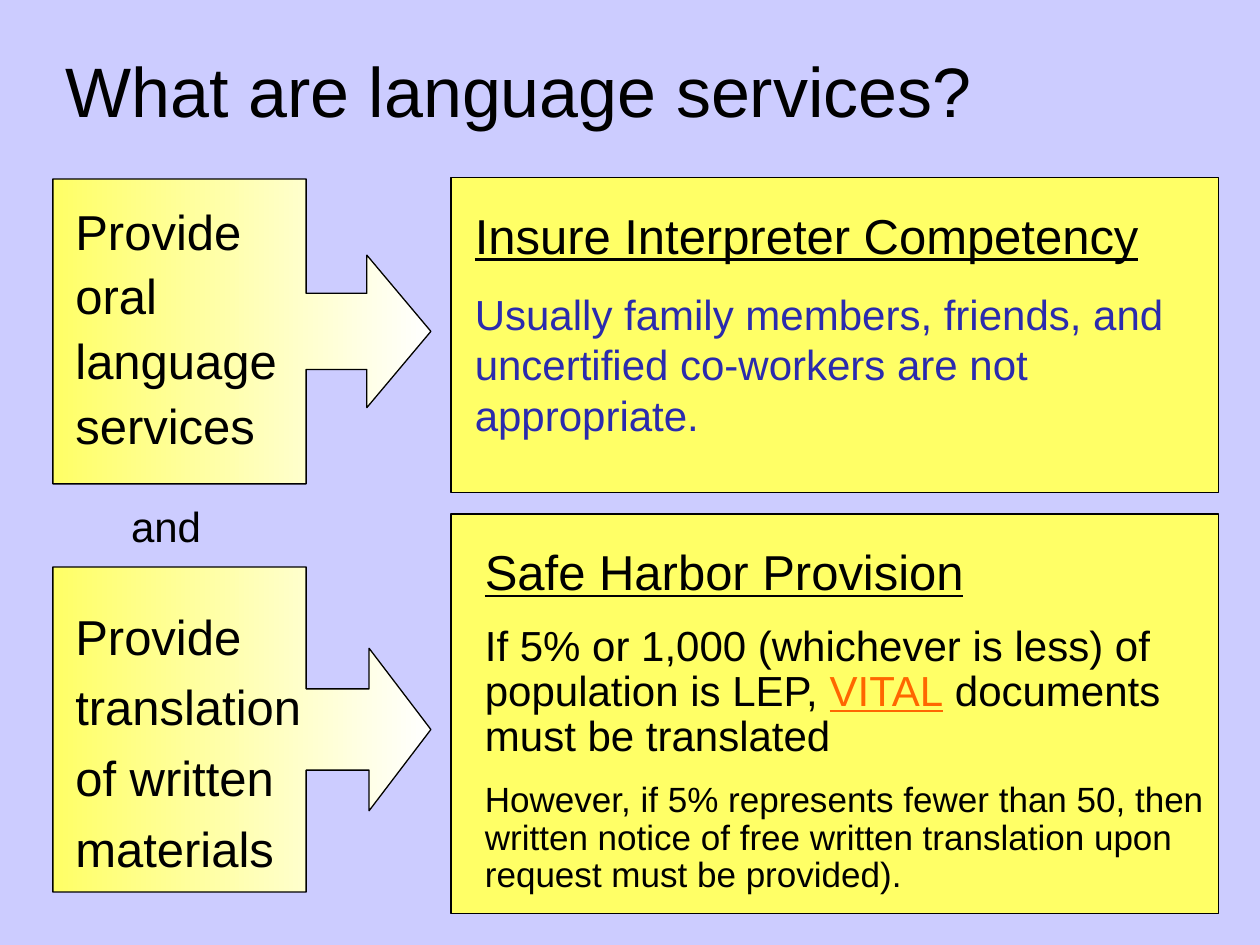
"""Build the slide that explains what language services are."""
import pptx
import pptx.dml.color
import pptx.enum.shapes
import pptx.enum.text
import pptx.util
from dataclasses import dataclass

Inches = pptx.util.Inches
Pt = pptx.util.Pt
Shape = pptx.enum.shapes.MSO_SHAPE


@dataclass(frozen=True)
class Theme:
    font: str = "Arial"
    background: str = "CCCCFF"
    panel: str = "FFFF66"
    fade: str = "FFFFFF"
    ink: str = "000000"
    note: str = "2B2BAD"
    accent: str = "FF6600"
    title: int = 40
    heading: int = 28
    body: int = 24
    small: int = 20
    line: float = 0.75


THEME = Theme()


def paragraph(*spans, size=THEME.heading, spacing=1.0, before=0):
    return {"spans": spans, "size": size, "spacing": spacing, "before": before}


def span(text, color=THEME.ink, underline=False):
    return text, color, underline


TITLE = paragraph(span("What are language services?"), size=THEME.title)
TITLE_AREA = (0.42, 0.33, 9, 0.77)

CALLOUTS = [
    ((0.42, 4.5, 3, 2.58), (0.25, 0.25, 0.19, 0.67)),
    ((0.42, 1.42, 3, 2.42), (0.25, 0.25, 0.21, 0.67)),
]
PANELS = [(3.58, 4.08, 6.09, 3.17), (3.58, 1.41, 6.09, 2.5)]

TEXTS = [
    ((0.5, 1.5, 1.92, 2.16), 0.1,
     [paragraph(span("Provide oral language services"), spacing=1.1)]),
    ((3.67, 1.58, 6.33, 1.97), 0.1, [
        paragraph(span("Insure Interpreter Competency", underline=True)),
        paragraph(span("Usually family members, friends, and uncertified "
                       "co-workers are not appropriate.", THEME.note),
                  size=THEME.body, before=14),
    ]),
    ((3.75, 4.25, 5.92, 2.9), 0.1, [
        paragraph(span("Safe Harbor Provision", underline=True)),
        paragraph(span("If 5% or 1,000 (whichever is less) of population is LEP, "),
                  span("VITAL", THEME.accent, True),
                  span(" documents must be translated"),
                  size=THEME.body, spacing=0.9, before=14),
        paragraph(span("However, if 5% represents fewer than 50, then written "
                       "notice of free written translation upon request must "
                       "be provided)."),
                  size=THEME.small, spacing=0.9, before=12),
    ]),
    ((0.5, 4.67, 2.17, 2.34), 0.1,
     [paragraph(span("Provide translation of written materials"), spacing=1.2)]),
    ((0.67, 3.92, 1.58, 0.5), 0.37, [paragraph(span("and"), size=THEME.body)]),
]


def rgb(value):
    return pptx.dml.color.RGBColor.from_string(value)


def place(area):
    return [Inches(length) for length in area]


def write(box, paragraphs, left_inset=0.1):
    frame = box.text_frame
    frame.word_wrap = True
    frame.auto_size = pptx.enum.text.MSO_AUTO_SIZE.NONE
    frame.vertical_anchor = pptx.enum.text.MSO_ANCHOR.TOP
    frame.margin_left, frame.margin_right = Inches(left_inset), Inches(0.1)
    frame.margin_top = frame.margin_bottom = Inches(0.05)
    for index, item in enumerate(paragraphs):
        para = frame.add_paragraph() if index else frame.paragraphs[0]
        para.alignment = pptx.enum.text.PP_ALIGN.LEFT
        para.line_spacing = item["spacing"]
        para.space_before = Pt(item["before"])
        for text, color, underline in item["spans"]:
            run = para.add_run()
            run.text = text
            run.font.name = THEME.font
            run.font.size = Pt(item["size"])
            run.font.color.rgb = rgb(color)
            run.font.underline = underline


def add_outlined(page, kind, area):
    shape = page.shapes.add_shape(kind, *place(area))
    shape.shadow.inherit = False
    shape.line.color.rgb = rgb(THEME.ink)
    shape.line.width = Pt(THEME.line)
    return shape


def add_callout(page, area, adjustments):
    callout = add_outlined(page, Shape.RIGHT_ARROW_CALLOUT, area)
    for index, value in enumerate(adjustments):
        callout.adjustments[index] = value
    callout.fill.gradient()
    callout.fill.gradient_angle = 0
    stops = callout.fill.gradient_stops
    for stop, color, position in zip(stops, (THEME.panel, THEME.fade), (0, 1)):
        stop.color.rgb = rgb(color)
        stop.position = position


def main():
    deck = pptx.Presentation()
    deck.slide_width, deck.slide_height = Inches(10), Inches(7.5)
    page = deck.slides.add_slide(deck.slide_layouts[5])
    page.background.fill.solid()
    page.background.fill.fore_color.rgb = rgb(THEME.background)

    title = page.shapes.title
    title.left, title.top, title.width, title.height = place(TITLE_AREA)
    write(title, [TITLE])

    for area, adjustments in CALLOUTS:
        add_callout(page, area, adjustments)
    for area in PANELS:
        panel = add_outlined(page, Shape.RECTANGLE, area)
        panel.fill.solid()
        panel.fill.fore_color.rgb = rgb(THEME.panel)
    for area, inset, paragraphs in TEXTS:
        write(page.shapes.add_textbox(*place(area)), paragraphs, inset)

    deck.save("out.pptx")


if __name__ == "__main__":
    main()
